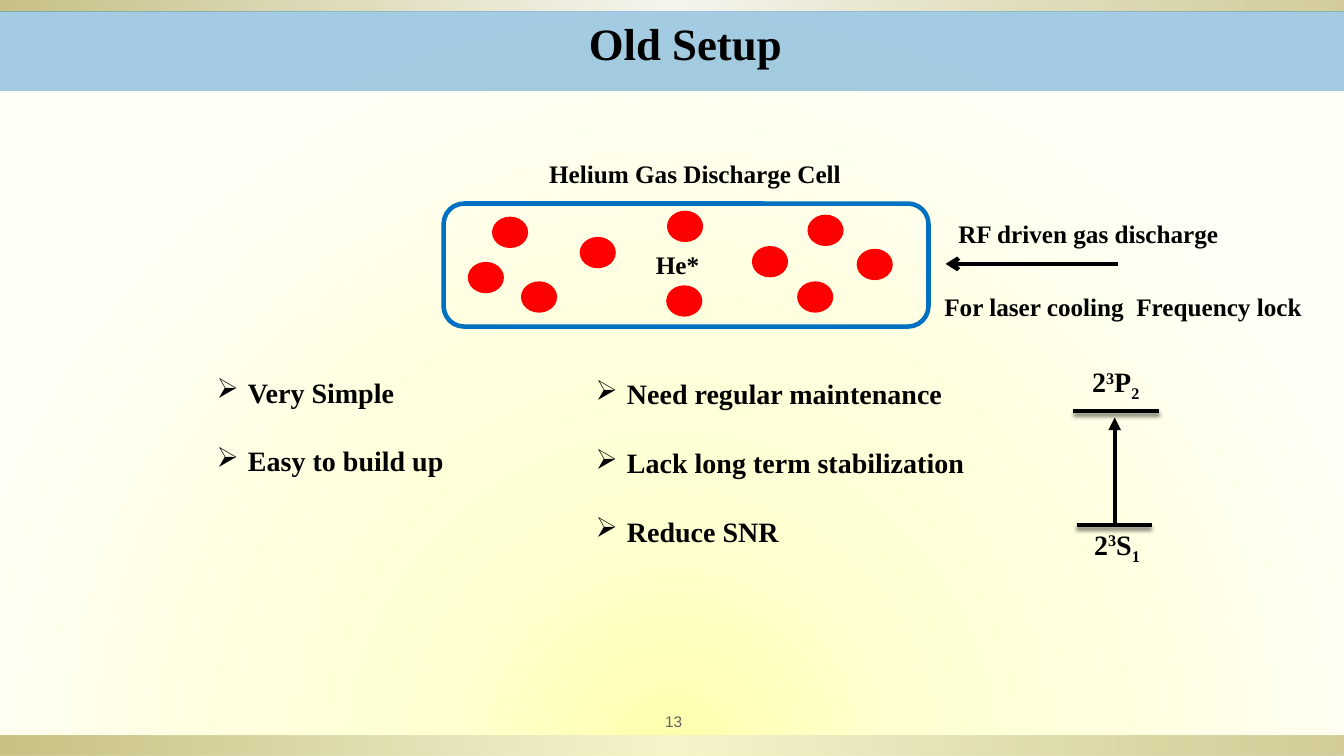
from dataclasses import dataclass

from lxml.etree import SubElement
from pptx import Presentation
from pptx.dml.color import RGBColor
from pptx.enum.shapes import MSO_CONNECTOR as Connector, MSO_SHAPE as Shape
from pptx.enum.text import MSO_ANCHOR as Anchor, PP_ALIGN as Align
from pptx.oxml.ns import qn
from pptx.util import Cm, Pt

WIDTH, HEIGHT = 33.87, 19.05
SERIF = "Times New Roman"
COLORS = {
    "black": "000000", "blue": "0070C0", "red": "FF0000", "grey": "636363",
    "gold": "918415", "silver": "EEEDE8",
    "glow": "FFFFAC", "cream": "FFFFD2", "ivory": "FFFFF7",
}
GOLD_STOPS = [(0, "gold", 50), (50, "silver", 50), (100, "gold", 40)]
GLOW_STOPS = [(0, "glow", 100), (31, "cream", 100), (100, "ivory", 100)]


@dataclass
class Box:
    left: float
    top: float
    width: float
    height: float

    def lengths(self) -> list:
        return [Cm(n) for n in (self.left, self.top, self.width, self.height)]


@dataclass
class Label:
    text: str
    box: Box


@dataclass
class BulletList:
    items: list[str]
    box: Box
    margin_top: float


@dataclass
class EnergyLevel:
    letter: str
    subscript: str
    label_box: Box
    start: float
    end: float
    y: float


@dataclass
class Arrow:
    start: tuple[float, float]
    end: tuple[float, float]
    head: str


ATOM_WIDTH, ATOM_HEIGHT = 0.91, 0.79
ATOMS = [
    (12.4, 5.46), (13.13, 7.09), (14.61, 5.97), (16.81, 5.31), (16.79, 7.19),
    (18.95, 6.2), (20.09, 7.09), (21.59, 6.27), (20.35, 5.41), (11.79, 6.6),
]
ATOM_LABEL = Label("He*", Box(16.28, 6.15, 1.98, 1.07))
LABELS = [
    Label("Helium Gas Discharge Cell", Box(13.59, 3.86, 8.1, 1.02)),
    Label("RF driven gas discharge", Box(23.9, 5.38, 7.14, 1.02)),
    Label("For laser cooling  Frequency lock", Box(23.55, 7.21, 9.8, 1.02)),
]
LISTS = [
    BulletList(["Need regular maintenance", "Lack long term stabilization", "Reduce SNR"],
               Box(14.76, 8.38, 9.88, 7.87), 1.12),
    BulletList(["Very Simple", "Easy to build up"], Box(5.21, 9.32, 6.27, 5.13), 0.13),
]
LEVELS = [
    EnergyLevel("S", "1", Box(24.99, 13.16, 6.32, 1.12), 27.13, 29.03, 13.23),
    EnergyLevel("P", "2", Box(25.76, 9.07, 4.72, 1.12), 27.05, 29.21, 10.36),
]
RF_ARROW = Arrow((28.17, 6.65), (23.83, 6.65), "arrow")
TRANSITION = Arrow((28.09, 13.18), (28.09, 10.52), "triangle")


def rgb(color: str) -> RGBColor:
    return RGBColor.from_string(COLORS[color])


def style_font(font, size: float, color: str = "black", name: str = SERIF, bold: bool = True) -> None:
    font.size, font.name, font.bold = Pt(size), name, bold
    font.color.rgb = rgb(color)


def set_gradient(fill, owner, stops: list, centre: dict | None = None) -> None:
    """Fill with a left-to-right gradient, or a circular one around centre."""
    fill.gradient()
    gradient = next(owner.iter(qn("a:gradFill")))
    for child in list(gradient):
        gradient.remove(child)
    stop_list = SubElement(gradient, qn("a:gsLst"))
    for position, color, opacity in stops:
        stop = SubElement(stop_list, qn("a:gs"), pos=str(position * 1000))
        swatch = SubElement(stop, qn("a:srgbClr"), val=COLORS[color])
        if opacity < 100:
            SubElement(swatch, qn("a:alpha"), val=str(opacity * 1000))
    if centre:
        circle = SubElement(gradient, qn("a:path"), path="circle")
        SubElement(circle, qn("a:fillToRect"), **centre)
    else:
        SubElement(gradient, qn("a:lin"), ang="0", scaled="0")


def add_plain_shape(shapes, kind, box: Box, color: str | None = None):
    """Add a shape without shadow or line; without a colour it is hollow."""
    shape = shapes.add_shape(kind, *box.lengths())
    shape.shadow.inherit = False
    shape.line.fill.background()
    if color:
        shape.fill.solid()
        shape.fill.fore_color.rgb = rgb(color)
    else:
        shape.fill.background()
    return shape


def add_text(shapes, box: Box, text: str = ""):
    text_frame = shapes.add_textbox(*box.lengths()).text_frame
    text_frame.word_wrap = True
    text_frame.text = text
    return text_frame


def add_label(shapes, label: Label) -> None:
    text_frame = add_text(shapes, label.box, label.text)
    style_font(text_frame.paragraphs[0].runs[0].font, 18)


def add_line(shapes, start: tuple[float, float], end: tuple[float, float]):
    """Add a thick black line and return it with its empty effect list."""
    line = shapes.add_connector(Connector.STRAIGHT, *(Cm(n) for n in (*start, *end)))
    line.line.width = Pt(3)
    line.line.color.rgb = rgb("black")
    return line, SubElement(line._element.spPr, qn("a:effectLst"))


def add_arrow(shapes, arrow: Arrow) -> None:
    line, _ = add_line(shapes, arrow.start, arrow.end)
    outline = line._element.spPr.find(qn("a:ln"))
    SubElement(outline, qn("a:tailEnd"), type=arrow.head)


def add_bullets(shapes, bullet_list: BulletList) -> None:
    text_frame = add_text(shapes, bullet_list.box, "\n".join(bullet_list.items))
    text_frame.margin_top = Cm(bullet_list.margin_top)
    for index, paragraph in enumerate(text_frame.paragraphs):
        style_font(paragraph.runs[0].font, 20)
        if index:
            paragraph.space_before = Pt(25)
        properties = paragraph._p.get_or_add_pPr()
        properties.set("marL", str(Cm(0.79)))
        properties.set("indent", str(-Cm(0.79)))
        SubElement(properties, qn("a:buChar"), char="➢")


def add_level(shapes, level: EnergyLevel) -> None:
    paragraph = add_text(shapes, level.label_box).paragraphs[0]
    paragraph.alignment = Align.CENTER
    for text, baseline in (("2", 0), ("3", 30), (level.letter, 0), (level.subscript, -25)):
        run = paragraph.add_run()
        run.text = text
        style_font(run.font, 20)
        if baseline:
            run._r.get_or_add_rPr().set("baseline", str(baseline * 1000))
    _, effects = add_line(shapes, (level.start, level.y), (level.end, level.y))
    shadow = SubElement(effects, qn("a:outerShdw"), blurRad=str(Pt(2.8)), dist=str(Pt(2.5)),
                        dir="5400000", rotWithShape="0")
    swatch = SubElement(shadow, qn("a:srgbClr"), val=COLORS["black"])
    SubElement(swatch, qn("a:alpha"), val="50000")


def add_frame(slide) -> None:
    """Draw the background, edge bars, page number and title band."""
    set_gradient(slide.background.fill, slide._element, GLOW_STOPS,
                 {"l": "50000", "t": "150000", "r": "50000", "b": "0"})
    for top, height in ((18.54, 0.51), (0, 0.3)):
        bar = add_plain_shape(slide.shapes, Shape.RECTANGLE, Box(0, top, WIDTH, height))
        set_gradient(bar.fill, bar._element, GOLD_STOPS)

    number = add_text(slide.shapes, Box(15.29, 17.78, 3.38, 0.79), "13")
    number.vertical_anchor = Anchor.MIDDLE
    number.margin_left = number.margin_right = Cm(0.13)
    number.paragraphs[0].alignment = Align.CENTER
    style_font(number.paragraphs[0].runs[0].font, 11, "grey", "Arial", bold=False)

    band = add_plain_shape(slide.shapes, Shape.RECTANGLE, Box(0, 0.28, WIDTH, 2.01), "blue")
    swatch = band._element.spPr.find(qn("a:solidFill"))[0]
    SubElement(swatch, qn("a:alpha"), val="36000")
    band.text_frame.vertical_anchor = Anchor.TOP
    title = band.text_frame.paragraphs[0]
    title.alignment = Align.CENTER
    for text, font_name in ((" ", "DejaVu Sans Mono"), ("Old Setup", SERIF)):
        run = title.add_run()
        run.text = text
        style_font(run.font, 32, name=font_name)


def add_cell(shapes) -> None:
    cell = add_plain_shape(shapes, Shape.ROUNDED_RECTANGLE, Box(11.18, 5.13, 12.22, 3.1))
    cell.line.color.rgb = rgb("blue")
    cell.line.width = Pt(3.25)
    for left, top in ATOMS:
        add_plain_shape(shapes, Shape.OVAL, Box(left, top, ATOM_WIDTH, ATOM_HEIGHT), "red")
    add_label(shapes, ATOM_LABEL)


def main() -> None:
    presentation = Presentation()
    presentation.slide_width, presentation.slide_height = Cm(WIDTH), Cm(HEIGHT)
    slide = presentation.slides.add_slide(presentation.slide_layouts[6])
    add_frame(slide)
    add_cell(slide.shapes.add_group_shape().shapes)
    for label in LABELS:
        add_label(slide.shapes, label)
    add_arrow(slide.shapes, RF_ARROW)
    for bullet_list in LISTS:
        add_bullets(slide.shapes, bullet_list)
    diagram = slide.shapes.add_group_shape().shapes
    for level in LEVELS:
        add_level(diagram, level)
    add_arrow(diagram, TRANSITION)
    presentation.save("out.pptx")


if __name__ == "__main__":
    main()
